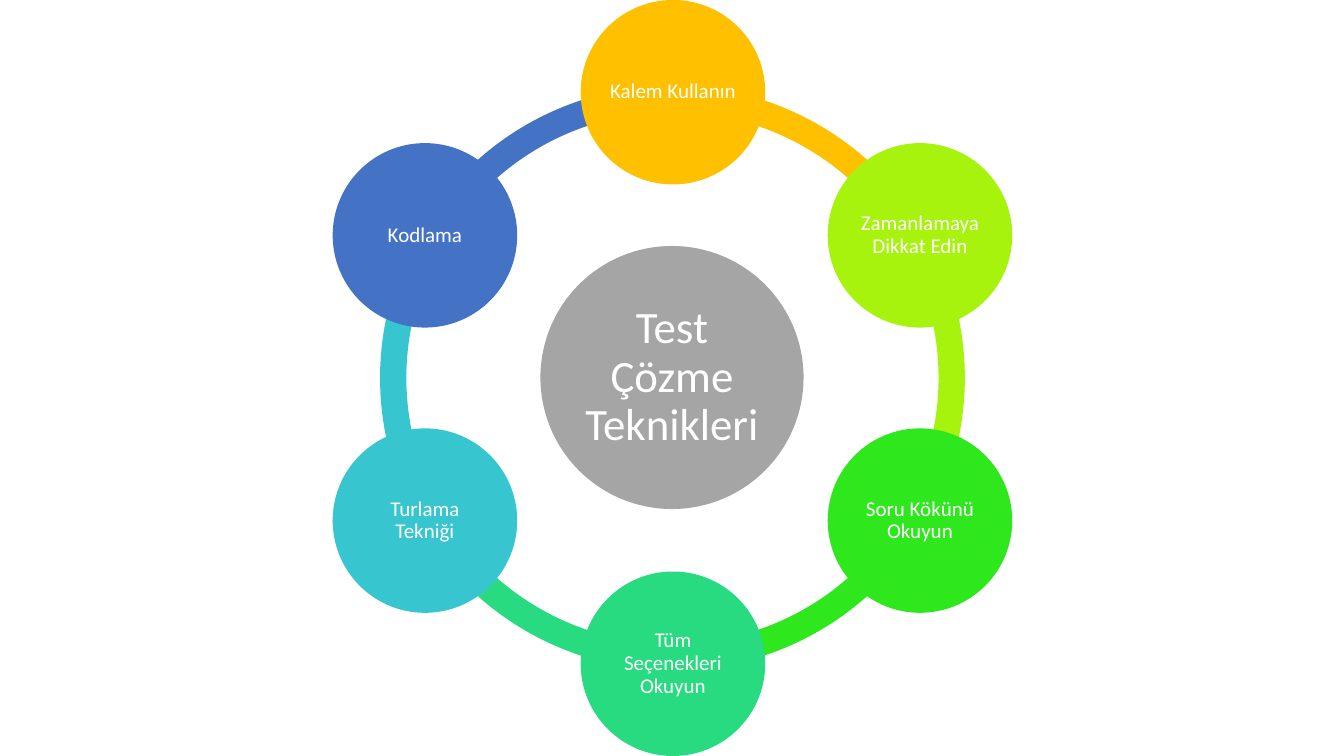
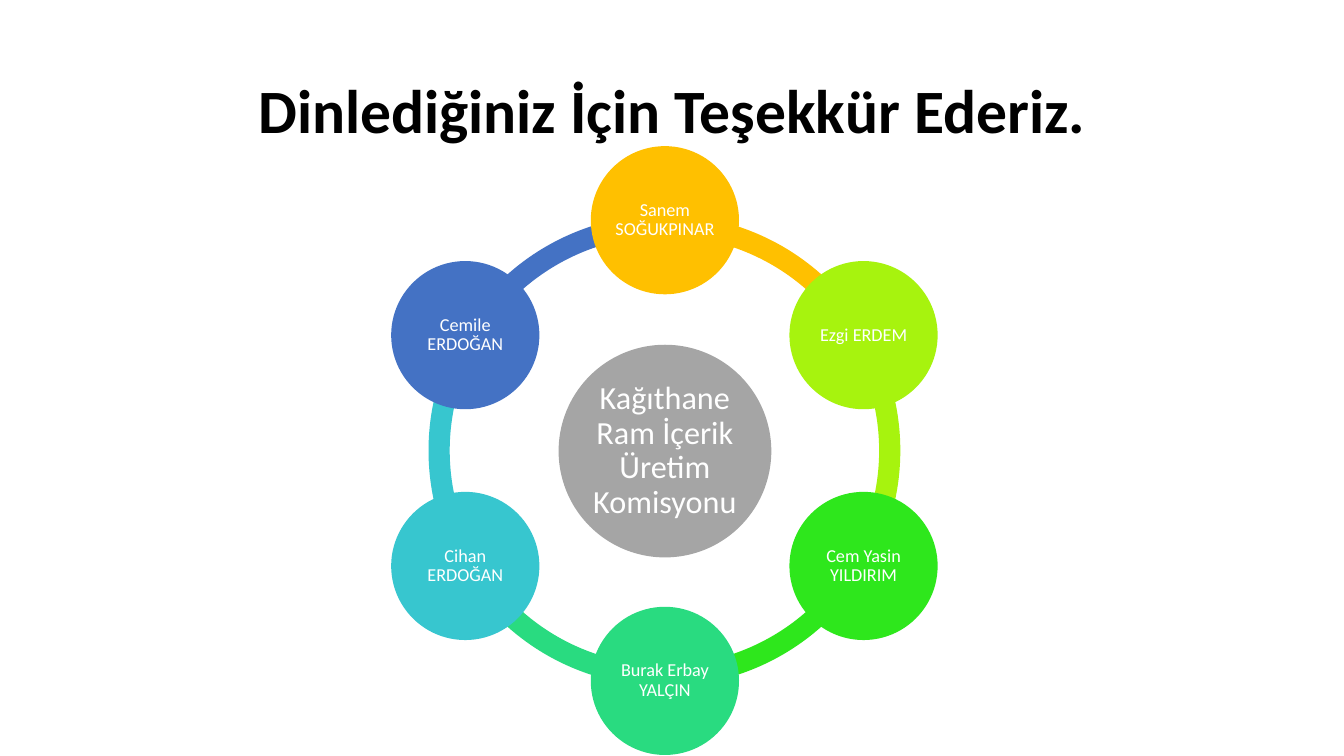
from dataclasses import dataclass
from math import cos, radians, sin

from pptx import Presentation
from pptx.dml.color import RGBColor
from pptx.enum.shapes import MSO_SHAPE
from pptx.enum.text import MSO_ANCHOR, MSO_AUTO_SIZE, PP_ALIGN
from pptx.util import Emu, Pt

BLANK, TITLE = 6, 5


@dataclass(frozen=True)
class Theme:
    font: str = "Calibri"
    white: str = "FFFFFF"
    black: str = "000000"
    hub: str = "A5A5A5"
    wheel: tuple = ("FFC000", "A7F30E", "2EE71C", "29DB80", "37C6CF", "4472C4")
    title: int = 44
    band: float = 0.045  # ring width as a share of its diameter
    leading: float = 0.9


@dataclass(frozen=True)
class Size:
    """Diameters in px and type sizes in points for one wheel."""
    ring: int
    hub: int
    dot: int
    orbit: int
    hub_type: int
    dot_type: int
    hub_inset: int
    dot_inset: int = 2


def px(count):
    """Turn px, 100 to the inch, into EMU."""
    return Emu(round(count) * 9144)


class Deck:
    def __init__(self, theme):
        self.theme = theme
        self.file = Presentation()
        self.file.slide_width, self.file.slide_height = px(1333), px(750)
        self.slide = None

    def page(self, layout):
        self.slide = self.file.slides.add_slide(self.file.slide_layouts[layout])

    def label(self, shape, text, *, size, color, bold=False, inset=None):
        frame = shape.text_frame
        frame.text = text
        frame.word_wrap = True
        frame.auto_size = MSO_AUTO_SIZE.NONE
        frame.vertical_anchor = MSO_ANCHOR.MIDDLE
        if inset is not None:
            frame.margin_left = frame.margin_right = px(inset)
            frame.margin_top = frame.margin_bottom = px(inset)
        line = frame.paragraphs[0]
        line.alignment = PP_ALIGN.CENTER
        line.line_spacing = self.theme.leading
        font = line.runs[0].font
        font.name, font.size, font.bold = self.theme.font, Pt(size), bold
        font.color.rgb = RGBColor.from_string(color)

    def title(self, text, left, top, width, height):
        shape = self.slide.shapes.title
        shape.left, shape.top = px(left), px(top)
        shape.width, shape.height = px(width), px(height)
        self.label(shape, text, size=self.theme.title, color=self.theme.black, bold=True)

    def round(self, group, kind, x, y, width, color):
        """Add a shape as wide as it is high, centred on x, y."""
        shape = group.shapes.add_shape(
            kind, px(x - width / 2), px(y - width / 2), px(width), px(width))
        shape.shadow.inherit = False
        shape.fill.solid()
        shape.fill.fore_color.rgb = RGBColor.from_string(color)
        shape.line.fill.background()
        return shape

    def arc(self, group, x, y, width, start, end, color):
        """Add part of a ring, with angles clockwise from the right."""
        shape = self.round(group, MSO_SHAPE.BLOCK_ARC, x, y, width, color)
        # Preset angles are 60000ths of a degree; adjustments are 100000ths.
        shape.adjustments[0] = start % 360 * 0.6
        shape.adjustments[1] = end % 360 * 0.6
        shape.adjustments[2] = self.theme.band

    def disc(self, group, text, x, y, width, color, size, inset):
        shape = self.round(group, MSO_SHAPE.OVAL, x, y, width, color)
        self.label(shape, text, size=size, color=self.theme.white, inset=inset)

    def wheel(self, x, y, size, core, names):
        """Add a hub with labelled discs, joined by a ring, clockwise from the top."""
        group = self.slide.shapes.add_group_shape()
        step = 360 / len(names)
        spokes = [(270 + step * i, name, color)
                  for i, (name, color) in enumerate(zip(names, self.theme.wheel))]
        for angle, _, color in reversed(spokes):
            self.arc(group, x, y, size.ring, angle, angle + step, color)
        self.disc(group, core, x, y, size.hub, self.theme.hub,
                  size.hub_type, size.hub_inset)
        for angle, name, color in spokes:
            turn = radians(angle)
            self.disc(group, name, x + size.orbit / 2 * cos(turn),
                      y + size.orbit / 2 * sin(turn), size.dot, color,
                      size.dot_type, size.dot_inset)


def main():
    deck = Deck(Theme())

    deck.page(BLANK)
    deck.wheel(667, 375, Size(ring=580, hub=261, dot=183, orbit=567,
                              hub_type=32, dot_type=15, hub_inset=4),
               "Test Çözme Teknikleri",
               ["Kalem Kullanın", "Zamanlamaya Dikkat Edin", "Soru Kökünü Okuyun",
                "Tüm Seçenekleri Okuyun", "Turlama Tekniği", "Kodlama"])

    deck.page(TITLE)
    deck.title("Dinlediğiniz İçin Teşekkür Ederiz.", 92, 40, 1150, 145)
    deck.wheel(659, 447, Size(ring=468, hub=211, dot=147, orbit=457,
                              hub_type=23, dot_type=13, hub_inset=3),
               "Kağıthane Ram İçerik Üretim Komisyonu",
               ["Sanem SOĞUKPINAR", "Ezgi ERDEM", "Cem Yasin YILDIRIM",
                "Burak Erbay YALÇIN", "Cihan ERDOĞAN", "Cemile ERDOĞAN"])

    deck.file.save("out.pptx")


if __name__ == "__main__":
    main()
